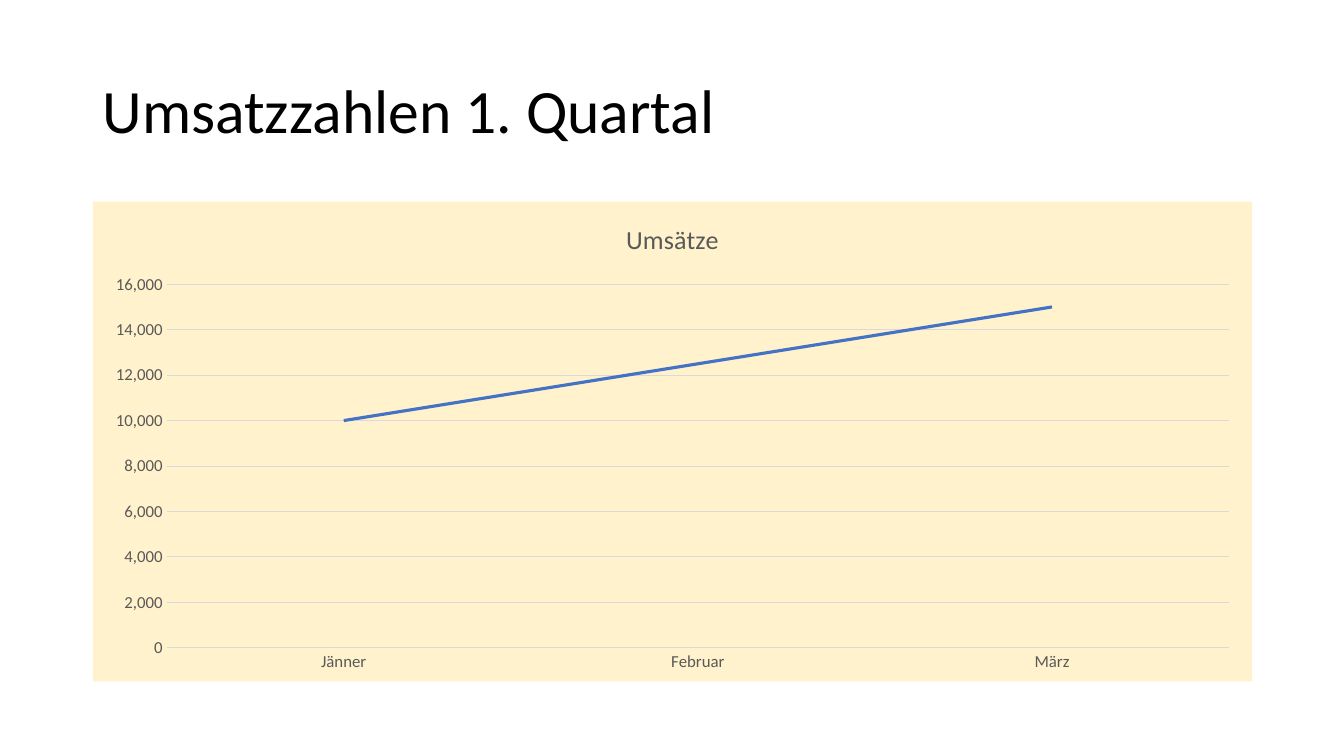
from dataclasses import dataclass

from lxml.etree import SubElement
from pptx import Presentation
from pptx.chart.data import CategoryChartData
from pptx.dml.color import RGBColor
from pptx.enum.chart import XL_CHART_TYPE, XL_MARKER_STYLE, XL_TICK_MARK
from pptx.enum.text import MSO_ANCHOR
from pptx.oxml import parse_xml
from pptx.oxml.ns import nsdecls, qn
from pptx.util import Inches, Pt

# Content
HEADING = "Umsatzzahlen 1. Quartal"
CHART_TITLE = "Umsätze"
REVENUE = {"Jänner": 10000, "Februar": 12500, "März": 15000}


@dataclass(frozen=True)
class Theme:
    font: str = "Calibri"
    heading: str = "000000"
    label: str = "595959"
    rule: str = "D9D9D9"
    panel: str = "FFF2CC"
    revenue: str = "4472C4"
    heading_size: float = 44
    chart_title_size: float = 18.6
    label_size: float = 12
    rule_width: float = 0.75
    revenue_width: float = 2.25


THEME = Theme()

# Layout
SLIDE_WIDTH, SLIDE_HEIGHT = 13.33, 7.5
MARGIN = 0.92
CONTENT_WIDTH = 11.5
HEADING_TOP, HEADING_HEIGHT = 0.4, 1.45
CHART_TOP, CHART_HEIGHT = 2, 4.76


def style_font(font, size, color):
    font.name = THEME.font
    font.size = Pt(size)
    font.bold = False
    font.color.rgb = RGBColor.from_string(color)


def style_line(line, width, color):
    line.width = Pt(width)
    line.color.rgb = RGBColor.from_string(color)


def fill_chart_panel(chart, color):
    panel = parse_xml(f"<c:spPr {nsdecls('c', 'a')}/>")
    fill = SubElement(panel, qn("a:solidFill"))
    SubElement(fill, qn("a:srgbClr"), val=color)
    outline = SubElement(panel, qn("a:ln"))
    SubElement(outline, qn("a:noFill"))
    chart.element.find(qn("c:chart")).addnext(panel)


def add_heading(slide):
    heading = slide.shapes.add_textbox(
        Inches(MARGIN), Inches(HEADING_TOP), Inches(CONTENT_WIDTH), Inches(HEADING_HEIGHT)
    ).text_frame
    heading.word_wrap = True
    heading.vertical_anchor = MSO_ANCHOR.MIDDLE
    heading.text = HEADING
    paragraph = heading.paragraphs[0]
    paragraph.line_spacing = 0.9
    style_font(paragraph.font, THEME.heading_size, THEME.heading)


def add_revenue_chart(slide):
    data = CategoryChartData(number_format="#,##0")
    data.categories = list(REVENUE)
    data.add_series(CHART_TITLE, list(REVENUE.values()))
    chart = slide.shapes.add_chart(
        XL_CHART_TYPE.LINE,
        Inches(MARGIN), Inches(CHART_TOP), Inches(CONTENT_WIDTH), Inches(CHART_HEIGHT),
        data,
    ).chart
    style_font(chart.font, THEME.label_size, THEME.label)
    fill_chart_panel(chart, THEME.panel)

    # Chart title
    chart.has_legend = False
    chart.has_title = True
    title = chart.chart_title
    title.include_in_layout = False
    title.text_frame.text = CHART_TITLE
    style_font(title.text_frame.paragraphs[0].font, THEME.chart_title_size, THEME.label)

    # Axes
    months, amounts = chart.category_axis, chart.value_axis
    for axis in (months, amounts):
        axis.major_tick_mark = axis.minor_tick_mark = XL_TICK_MARK.NONE
        style_font(axis.tick_labels.font, THEME.label_size, THEME.label)
    style_line(months.format.line, THEME.rule_width, THEME.rule)
    amounts.format.line.fill.background()
    amounts.minimum_scale, amounts.maximum_scale, amounts.major_unit = 0, 16000, 2000
    amounts.tick_labels.number_format = "#,##0"
    amounts.tick_labels.number_format_is_linked = False
    amounts.has_major_gridlines = True
    style_line(amounts.major_gridlines.format.line, THEME.rule_width, THEME.rule)

    # Revenue line
    chart.plots[0].vary_by_categories = False
    revenue = chart.plots[0].series[0]
    revenue.smooth = False
    revenue.marker.style = XL_MARKER_STYLE.NONE
    style_line(revenue.format.line, THEME.revenue_width, THEME.revenue)


def main():
    presentation = Presentation()
    presentation.slide_width = Inches(SLIDE_WIDTH)
    presentation.slide_height = Inches(SLIDE_HEIGHT)
    slide = presentation.slides.add_slide(presentation.slide_layouts[6])
    add_heading(slide)
    add_revenue_chart(slide)
    presentation.save("out.pptx")


if __name__ == "__main__":
    main()
